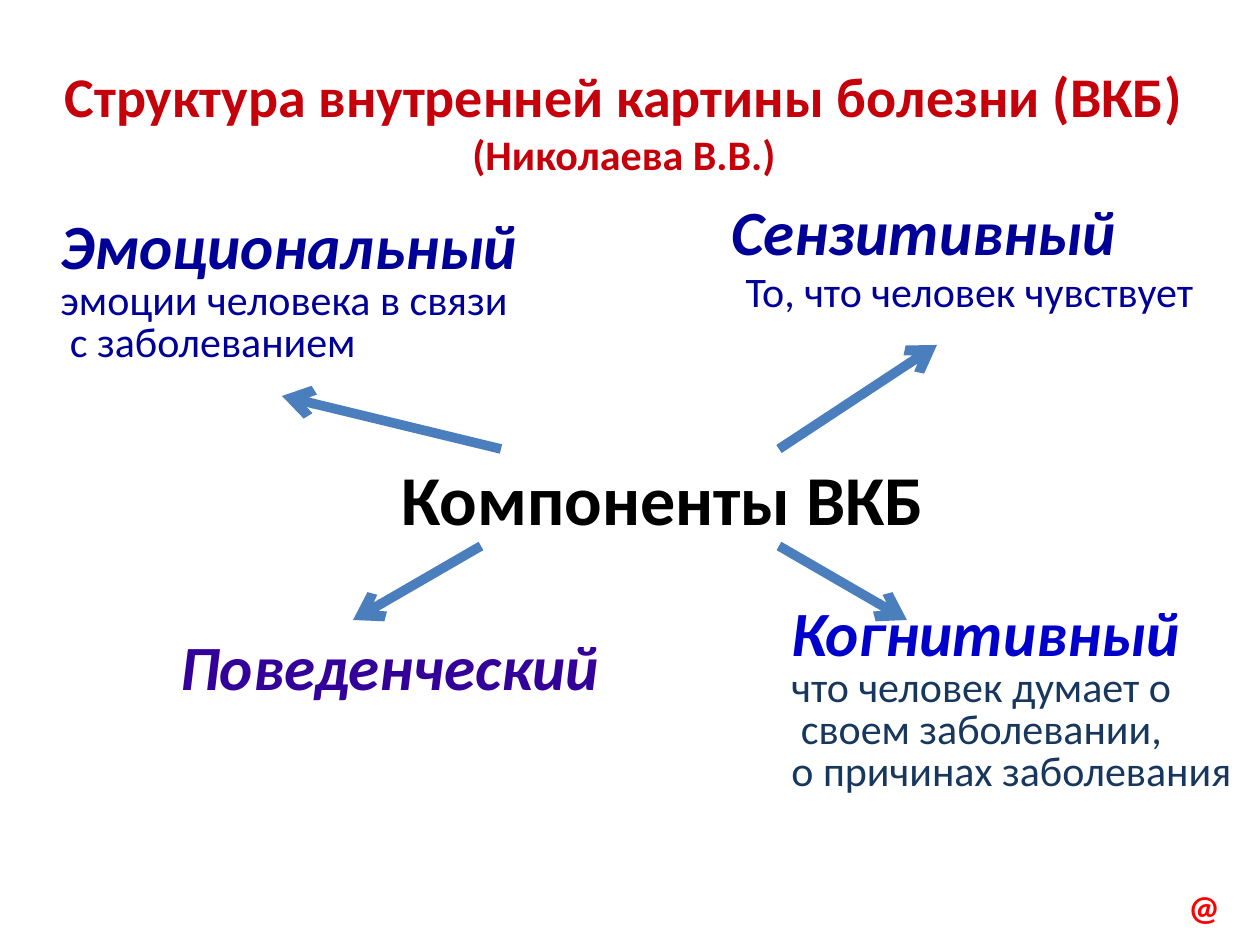
from dataclasses import dataclass
from lxml import etree
from pptx import Presentation, util as u
from pptx.dml.color import RGBColor
from pptx.enum import shapes, text
from pptx.oxml.ns import qn


@dataclass(frozen=True)
class Theme:
    font: str = "Calibri"
    title: str = "C5000B"
    navy: str = "000099"
    violet: str = "330099"
    blue: str = "0000CC"
    slate: str = "17375E"
    black: str = "000000"
    red: str = "FF0000"
    arrow: str = "4B7EBC"
    hub: int = 40
    name: int = 36
    head: int = 32
    body: int = 24
    mark: int = 20
    line: float = 5.5


T = Theme()


def px(n):
    return u.Emu(round(n * 914400 / 126))


def add_run(para, words, size, color, bold=False, slant=False):
    run = para.add_run()
    run.text = words
    font = run.font
    font.name, font.size = T.font, u.Pt(size)
    font.bold, font.italic = bold, slant
    font.color.rgb = RGBColor.from_string(color)


def add_box(slide, box, wrap=False):
    frame = slide.shapes.add_textbox(*map(px, box)).text_frame
    frame.word_wrap = wrap
    frame.auto_size = text.MSO_AUTO_SIZE.SHAPE_TO_FIT_TEXT
    return frame


def add_title(slide, box):
    para = add_box(slide, box, True).paragraphs[0]
    para.alignment = text.PP_ALIGN.CENTER
    para.space_after = u.Pt(10)
    add_run(para, "Структура внутренней картины болезни (ВКБ) ", T.head, T.title, True)
    add_run(para, "(Николаева В.В.)", T.body, T.title, True)


def add_part(slide, box, name, color, notes=(), tint=T.navy, pitch=None):
    frame = add_box(slide, box)
    para = frame.paragraphs[0]
    add_run(para, name, T.name, color, True, True)
    for note in notes:
        para = frame.add_paragraph()
        if note.startswith("То"):
            add_run(para, " ", T.name, tint, True)
        add_run(para, note, T.body, tint)
    if pitch:
        for para in frame.paragraphs:
            para.line_spacing = u.Pt(pitch)


def add_arrow(slide, start, end):
    link = slide.shapes.add_connector(
        shapes.MSO_CONNECTOR.STRAIGHT, *map(px, start + end))
    link.line.width = u.Pt(T.line)
    link.line.color.rgb = RGBColor.from_string(T.arrow)
    etree.SubElement(link.line._get_or_add_ln(), qn("a:tailEnd"), type="arrow")
    etree.SubElement(link._element.spPr, qn("a:effectLst"))


def add_hub(slide, box):
    left, top, _, high = box
    para = add_box(slide, box).paragraphs[0]
    add_run(para, "Компоненты ВКБ", T.hub, T.black, True)
    rays = [
        (112, 0, -219, -53),
        (390, 0, 158, -104),
        (92, high, -128, 74),
        (390, high, 128, 74),
    ]
    for x, y, dx, dy in rays:
        x, y = left + x, top + y
        add_arrow(slide, (x, y), (x + dx, y + dy))


def add_mark(slide, box):
    para = add_box(slide, box, True).paragraphs[0]
    para.line_spacing = 1.07
    para.space_after = u.Pt(8)
    add_run(para, "@", T.mark, T.red, True)


def main():
    deck = Presentation()
    deck.slide_width, deck.slide_height = px(1260), px(945)
    slide = deck.slides.add_slide(deck.slide_layouts[6])
    add_title(slide, (44, 55, 1160, 131))
    add_part(slide, (48, 234, 488, 141), "Эмоциональный", T.navy,
             ["эмоции человека в связи", " с заболеванием"], pitch=24)
    add_part(slide, (719, 209, 491, 122), "Сензитивный", T.navy,
             ["То, что человек чувствует"], pitch=30)
    add_part(slide, (168, 621, 456, 89), "Поведенческий", T.violet)
    add_part(slide, (779, 621, 470, 183), "Когнитивный", T.blue,
             ["что человек думает о", " своем заболевании,", "о причинах заболевания"],
             T.slate, 24)
    add_hub(slide, (389, 449, 553, 97))
    add_mark(slide, (1176, 876, 54, 57))
    deck.save("out.pptx")


if __name__ == "__main__":
    main()
